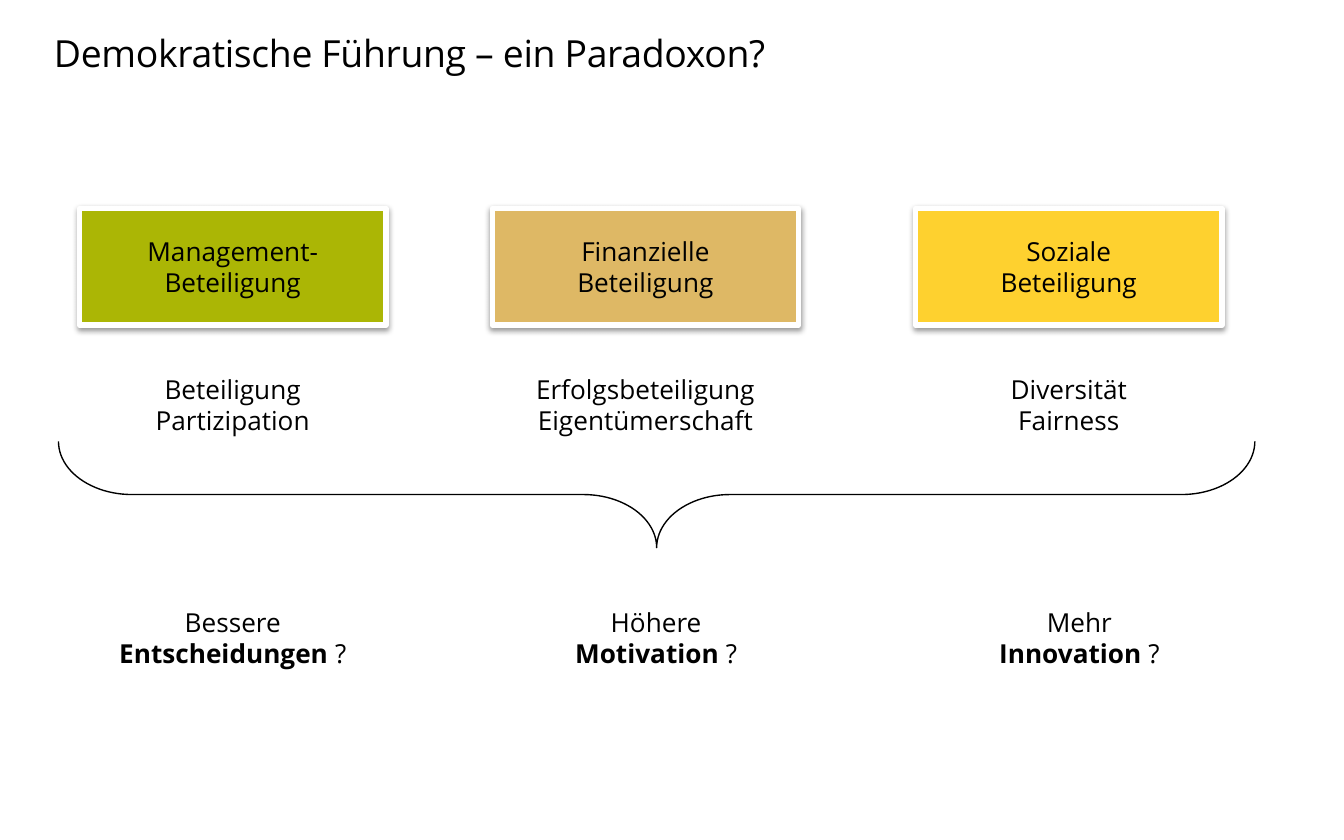
import dataclasses
import typing

import lxml.etree
import pptx
import pptx.dml.color
import pptx.enum.shapes
import pptx.enum.text
import pptx.oxml
import pptx.oxml.ns
import pptx.util

Cm = pptx.util.Cm
Pt = pptx.util.Pt
ALIGN = pptx.enum.text.PP_ALIGN
ANCHOR = pptx.enum.text.MSO_ANCHOR
SHAPES = pptx.enum.shapes.MSO_SHAPE


@dataclasses.dataclass(frozen=True)
class Theme:
    font: str = "Open Sans"
    title_size: float = 20
    body_size: float = 14
    ink: str = "000000"
    frame: str = "FFFFFF"
    management: str = "ABB605"
    financial: str = "DEB865"
    social: str = "FED12F"


@dataclasses.dataclass(frozen=True)
class Participation:
    center: float
    fill: str
    heading: tuple[str, ...]
    terms: tuple[str, ...]
    terms_width: float


@dataclasses.dataclass(frozen=True)
class Outcome:
    quality: str
    effect: str
    width: float


THEME = Theme()
BOX_WIDTH, BOX_HEIGHT, BOX_TOP = 5.79, 2.21, 3.94
LABEL_HEIGHT, TERMS_TOP, OUTCOMES_TOP = 1.45, 6.93, 11.33
FIRST_OUTCOME, OUTCOME_STEP = 4.4, 8
BRACE_CENTER, BRACE_DEPTH, BRACE_SPAN = (12.41, 9.35), 2.01, 22.61

PARTICIPATIONS = (
    Participation(4.4, THEME.management, ("Management-Beteiligung",), ("Beteiligung", "Partizipation"), 3.45),
    Participation(12.2, THEME.financial, ("Finanzielle", "Beteiligung"), ("Erfolgsbeteiligung", "Eigentümerschaft"), 4.67),
    Participation(20.2, THEME.social, ("Soziale", "Beteiligung"), ("Diversität", "Fairness"), 2.72),
)
OUTCOMES = (
    Outcome("Bessere", "Entscheidungen", 4.83),
    Outcome("Höhere", "Motivation", 3.6),
    Outcome("Mehr", "Innovation", 3.58),
)


def color(value: str) -> pptx.dml.color.RGBColor:
    return pptx.dml.color.RGBColor.from_string(value)


def write(frame: typing.Any, lines: typing.Sequence[str], *, size: float = THEME.body_size,
          align: typing.Any = ALIGN.CENTER, anchor: typing.Any = ANCHOR.TOP,
          wrap: bool = True, bold: str = "", spacing: int = 0) -> None:
    """Write one paragraph per line, setting the word given as bold in bold."""
    frame.word_wrap = wrap
    frame.vertical_anchor = anchor
    for index, line in enumerate(lines):
        paragraph = frame.paragraphs[0] if index == 0 else frame.add_paragraph()
        paragraph.alignment = align
        before, strong, after = line.partition(bold) if bold else (line, "", "")
        for part in filter(None, (before, strong, after)):
            run = paragraph.add_run()
            run.text = part
            run.font.name = THEME.font
            run.font.size = Pt(size)
            run.font.bold = bool(bold) and part == bold
            run.font.color.rgb = color(THEME.ink)
            if spacing:
                run.font._element.set("spc", str(spacing))


def cast_shadow(shape: typing.Any) -> None:
    """Give the shape a soft shadow straight below it."""
    effects = pptx.oxml.parse_xml(
        f'<a:effectLst {pptx.oxml.ns.nsdecls("a")}>'
        f'<a:outerShdw blurRad="{Pt(3.1)}" dist="{Pt(1.6)}" dir="5400000" rotWithShape="0">'
        '<a:srgbClr val="000000"><a:alpha val="38000"/></a:srgbClr>'
        '</a:outerShdw></a:effectLst>')
    shape._element.spPr.append(effects)


def add_label(slide: typing.Any, center: float, top: float, width: float,
              lines: typing.Sequence[str], bold: str = "") -> None:
    label = slide.shapes.add_textbox(Cm(center - width / 2), Cm(top), Cm(width), Cm(LABEL_HEIGHT))
    label.text_frame.auto_size = pptx.enum.text.MSO_AUTO_SIZE.SHAPE_TO_FIT_TEXT
    write(label.text_frame, lines, wrap=False, bold=bold)


def add_participation(slide: typing.Any, participation: Participation) -> None:
    box = slide.shapes.add_shape(SHAPES.RECTANGLE, Cm(participation.center - BOX_WIDTH / 2),
                                 Cm(BOX_TOP), Cm(BOX_WIDTH), Cm(BOX_HEIGHT))
    box.fill.solid()
    box.fill.fore_color.rgb = color(participation.fill)
    box.line.color.rgb = color(THEME.frame)
    box.line.width = Pt(3)
    cast_shadow(box)
    write(box.text_frame, participation.heading, anchor=ANCHOR.MIDDLE)
    add_label(slide, participation.center, TERMS_TOP, participation.terms_width, participation.terms)


def add_brace(slide: typing.Any) -> None:
    x, y = BRACE_CENTER
    brace = slide.shapes.add_shape(SHAPES.RIGHT_BRACE, Cm(x - BRACE_DEPTH / 2),
                                   Cm(y - BRACE_SPAN / 2), Cm(BRACE_DEPTH), Cm(BRACE_SPAN))
    brace.rotation = 90
    brace.adjustments[0] = 0.69
    brace.adjustments[1] = 0.5
    brace.shadow.inherit = False
    brace.fill.background()
    brace.line.color.rgb = color(THEME.ink)
    brace.line.width = Pt(0.75)


def add_title(slide: typing.Any, text: str) -> None:
    title = slide.shapes.add_textbox(Cm(0), Cm(0), Cm(21.59), Cm(2))
    frame = title.text_frame
    frame.margin_left = Cm(1.02)
    frame.margin_top = frame.margin_right = frame.margin_bottom = Cm(0)
    write(frame, (text,), size=THEME.title_size, align=ALIGN.LEFT, anchor=ANCHOR.MIDDLE, spacing=-20)


def main() -> None:
    presentation = pptx.Presentation()
    presentation.slide_width, presentation.slide_height = Cm(25.4), Cm(15.88)
    slide = presentation.slides.add_slide(presentation.slide_layouts[6])
    for participation in PARTICIPATIONS:
        add_participation(slide, participation)
    add_brace(slide)
    for index, outcome in enumerate(OUTCOMES):
        add_label(slide, FIRST_OUTCOME + index * OUTCOME_STEP, OUTCOMES_TOP, outcome.width,
                  (outcome.quality, f"{outcome.effect} ?"), bold=outcome.effect)
    add_title(slide, "Demokratische Führung – ein Paradoxon?")
    presentation.save("out.pptx")


if __name__ == "__main__":
    main()
